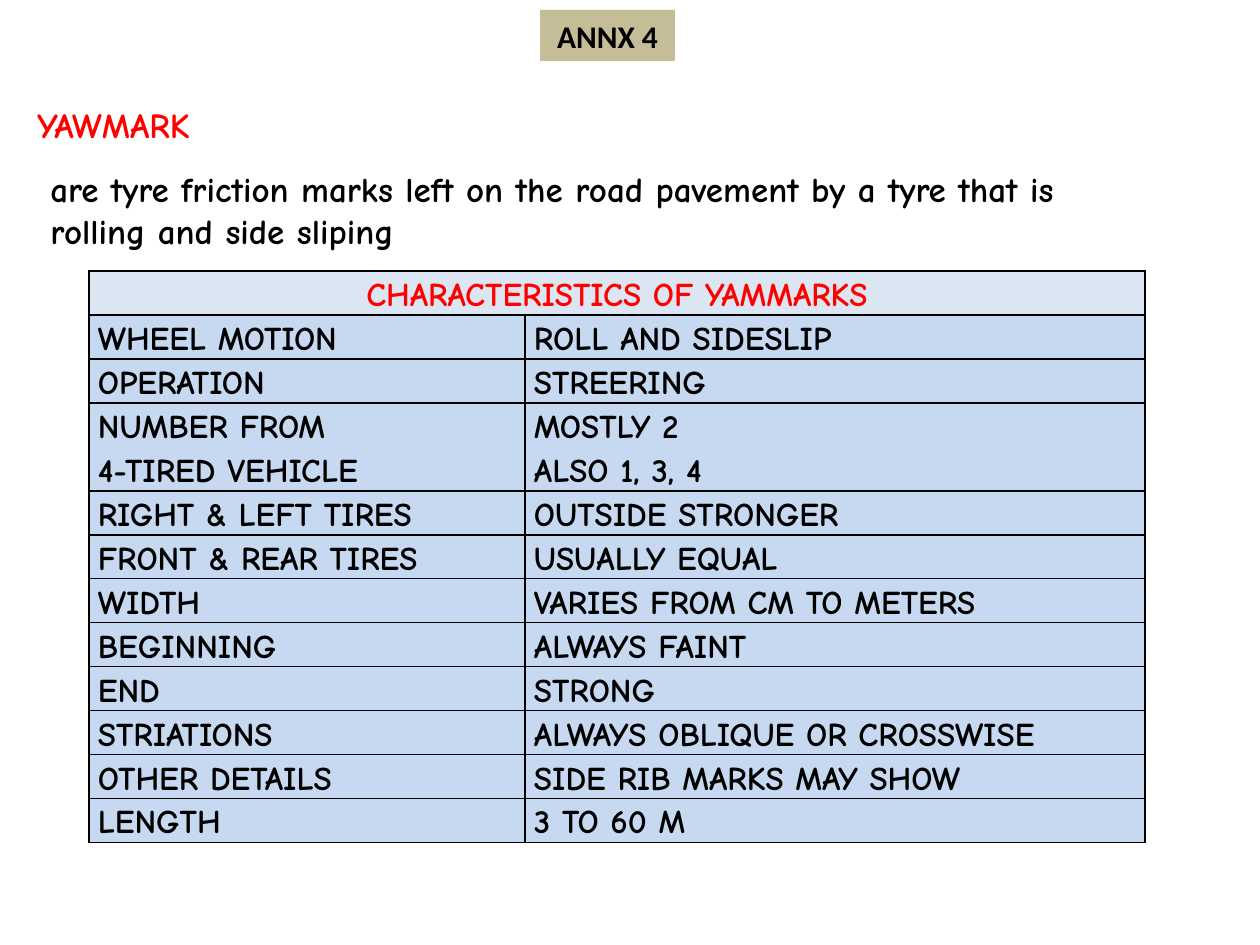
from lxml.etree import SubElement
from pptx import Presentation
from pptx.dml.color import RGBColor
from pptx.enum.shapes import MSO_SHAPE
from pptx.enum.text import MSO_ANCHOR, PP_ALIGN
from pptx.oxml.ns import qn
from pptx.util import Pt

EMU_PER_PX = 914400 / 126
RED, BLACK = "FF0000", "000000"
HEADER_FILL, ROW_FILL, LABEL_FILL = "DCE6F2", "C6D9F1", "C4BD97"
LINE_HEIGHT = 44
CHARACTERISTICS = [
    ("WHEEL MOTION", "ROLL AND SIDESLIP"),
    ("OPERATION", "STREERING"),
    ("NUMBER FROM\n4-TIRED VEHICLE", "MOSTLY 2\nALSO 1, 3, 4"),
    ("RIGHT & LEFT TIRES", "OUTSIDE STRONGER"),
    ("FRONT & REAR TIRES", "USUALLY EQUAL"),
    ("WIDTH", "VARIES FROM CM TO METERS"),
    ("BEGINNING", "ALWAYS FAINT"),
    ("END", "STRONG"),
    ("STRIATIONS", "ALWAYS OBLIQUE OR CROSSWISE"),
    ("OTHER DETAILS", "SIDE RIB MARKS MAY SHOW"),
    ("LENGTH", "3 TO 60 M"),
]


def px(length):
    return round(length * EMU_PER_PX)


def rgb(code):
    return RGBColor.from_string(code)


def assign(target, values):
    for name, value in values.items():
        setattr(target, name, value)


class SlideBuilder:
    """Holds the text style and the slide being built."""

    font = {"name": "Comic Neue", "bold": True}
    cell_format = {"margin_left": px(9), "margin_right": px(9), "margin_top": 0,
                   "margin_bottom": 0, "vertical_anchor": MSO_ANCHOR.TOP}

    def __init__(self, slide):
        self.slide = slide

    def line(self, paragraph, text, size, color, font=None, **layout):
        paragraph.text = text
        assign(paragraph, layout)
        assign(paragraph.font, {**self.font, **(font or {}), "size": Pt(size)})
        paragraph.font.color.rgb = rgb(color)

    def definition(self, box, term, lines):
        frame = self.slide.shapes.add_textbox(*map(px, box)).text_frame
        frame.word_wrap = True
        self.line(frame.paragraphs[0], term, 20, RED)
        for index, text in enumerate(lines):
            paragraph = frame.add_paragraph()
            paragraph._p.get_or_add_pPr().set("marL", str(px(13)))
            self.line(paragraph, text, 20, BLACK,
                      space_before=Pt(0 if index else 12.6))

    def label(self, box, text):
        tag = self.slide.shapes.add_shape(MSO_SHAPE.RECTANGLE, *map(px, box))
        tag.shadow.inherit = False
        tag.fill.solid()
        tag.fill.fore_color.rgb = rgb(LABEL_FILL)
        tag.line.fill.background()
        tag.text_frame.word_wrap = False
        self.line(tag.text_frame.paragraphs[0], text, 18, BLACK,
                  {"name": "Calibri"}, alignment=PP_ALIGN.CENTER)

    def border(self, cell):
        properties = cell._tc.get_or_add_tcPr()
        for side in ("lnL", "lnR", "lnT", "lnB"):
            edge = SubElement(properties, qn(f"a:{side}"), w=str(Pt(1)))
            fill = SubElement(edge, qn("a:solidFill"))
            SubElement(fill, qn("a:srgbClr"), val=BLACK)

    def cell(self, cell, text, fill, color, alignment):
        assign(cell, self.cell_format)
        self.border(cell)
        cell.fill.solid()
        cell.fill.fore_color.rgb = rgb(fill)
        frame = cell.text_frame
        for index, part in enumerate(text.split("\n")):
            paragraph = frame.add_paragraph() if index else frame.paragraphs[0]
            self.line(paragraph, part, 19, color,
                      alignment=alignment, line_spacing=1.15)

    def table(self, left, top, widths, heading, rows):
        heights = [LINE_HEIGHT] + [
            LINE_HEIGHT * (first.count("\n") + 1) for first, _ in rows]
        table = self.slide.shapes.add_table(
            len(heights), len(widths), px(left), px(top),
            px(sum(widths)), px(sum(heights))).table
        for column, width in zip(table.columns, widths):
            column.width = px(width)
        for row, height in zip(table.rows, heights):
            row.height = px(height)
        table.cell(0, 0).merge(table.cell(0, len(widths) - 1))
        for index in range(len(widths)):
            self.cell(table.cell(0, index), "" if index else heading,
                      HEADER_FILL, RED, PP_ALIGN.CENTER)
        for row_index, row in enumerate(rows, 1):
            for index, text in enumerate(row):
                self.cell(table.cell(row_index, index), text,
                          ROW_FILL, BLACK, PP_ALIGN.LEFT)


def main():
    deck = Presentation()
    deck.slide_width, deck.slide_height = px(1260), px(945)
    builder = SlideBuilder(deck.slides.add_slide(deck.slide_layouts[6]))
    builder.table(89, 271, (436, 620), "CHARACTERISTICS OF YAMMARKS",
                  CHARACTERISTICS)
    builder.definition(
        (25, 97, 1218, 165), "YAWMARK",
        ("are tyre friction marks left on the road pavement by a tyre that is",
         "rolling and side sliping"))
    builder.label((540, 10, 135, 51), "ANNX 4")
    deck.save("out.pptx")


if __name__ == "__main__":
    main()
